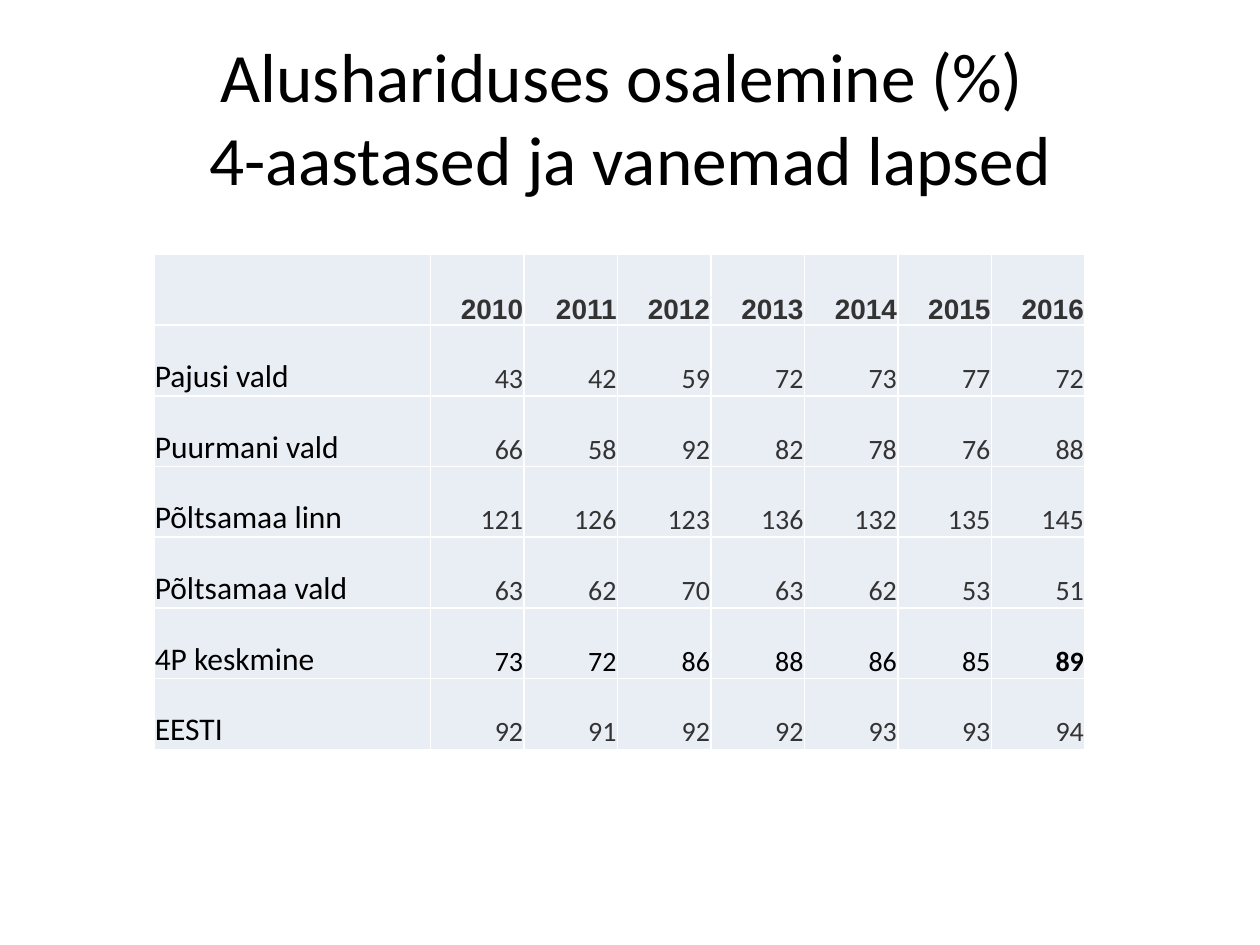
from lxml.etree import SubElement
from pptx import Presentation
from pptx.dml.color import RGBColor
from pptx.enum.text import MSO_ANCHOR, MSO_AUTO_SIZE, PP_ALIGN
from pptx.oxml.ns import qn
from pptx.util import Cm, Pt

COLORS = {"text": "000000", "number": "333333", "cell": "E9EDF4", "border": "FFFFFF"}
TITLE = "Alushariduses osalemine (%) \v4-aastased ja vanemad lapsed"
YEARS = range(2010, 2017)
RATES = {
    "Pajusi vald": [43, 42, 59, 72, 73, 77, 72],
    "Puurmani vald": [66, 58, 92, 82, 78, 76, 88],
    "Põltsamaa linn": [121, 126, 123, 136, 132, 135, 145],
    "Põltsamaa vald": [63, 62, 70, 63, 62, 53, 51],
    "4P keskmine": [73, 72, 86, 88, 86, 85, 89],
    "EESTI": [92, 91, 92, 92, 93, 93, 94],
}
AVERAGE = "4P keskmine"


def color(name):
    return RGBColor.from_string(COLORS[name])


def set_font(p, size, name="text", bold=False, face="Calibri"):
    p.font.name, p.font.size, p.font.bold = face, Pt(size), bold
    p.font.color.rgb = color(name)


def add_borders(cell):
    tcPr = cell._tc.get_or_add_tcPr()
    for side in ("a:lnL", "a:lnR", "a:lnT", "a:lnB"):
        ln = SubElement(tcPr, qn(side), w=str(Pt(1)))
        fill = SubElement(ln, qn("a:solidFill"))
        SubElement(fill, qn("a:srgbClr"), val=COLORS["border"])


def fill_cell(cell, text, align):
    add_borders(cell)
    cell.fill.solid()
    cell.fill.fore_color.rgb = color("cell")
    cell.vertical_anchor = MSO_ANCHOR.BOTTOM
    cell.margin_left = cell.margin_right = cell.margin_top = Cm(0.02)
    cell.margin_bottom = 0
    cell.text = str(text)
    p = cell.text_frame.paragraphs[0]
    p.alignment = align
    return p


def place_title(s, left, top, width, height):
    sp = s.shapes.title
    sp.left, sp.top, sp.width, sp.height = left, top, width, height
    tf = sp.text_frame
    tf.text = TITLE
    tf.auto_size = MSO_AUTO_SIZE.NONE
    tf.vertical_anchor = MSO_ANCHOR.MIDDLE
    p = tf.paragraphs[0]
    p.alignment = PP_ALIGN.CENTER
    set_font(p, 39.6)


def place_table(s, left, top, width, height):
    rows, cols = len(RATES) + 1, len(YEARS) + 1
    table = s.shapes.add_table(rows, cols, left, top, width, height).table
    label_width = Cm(5.58)
    table.columns[0].width = label_width
    for c in range(1, cols):
        table.columns[c].width = (width - label_width) // len(YEARS)

    # Header row of years
    set_font(fill_cell(table.cell(0, 0), "", PP_ALIGN.LEFT), 18)
    for c, year in enumerate(YEARS, 1):
        p = fill_cell(table.cell(0, c), year, PP_ALIGN.RIGHT)
        set_font(p, 16, "number", True, "Arial")

    # One row per municipality; the latest average is bold
    for r, (label, values) in enumerate(RATES.items(), 1):
        set_font(fill_cell(table.cell(r, 0), label, PP_ALIGN.LEFT), 18)
        is_average = label == AVERAGE
        for c, value in enumerate(values, 1):
            p = fill_cell(table.cell(r, c), value, PP_ALIGN.RIGHT)
            set_font(p, 16, "text" if is_average else "number",
                     is_average and c == len(values))


def main():
    prs = Presentation()
    prs.slide_width, prs.slide_height = Cm(25.4), Cm(19.05)
    s = prs.slides.add_slide(prs.slide_layouts[5])
    place_title(s, Cm(1.27), Cm(0.76), Cm(22.86), Cm(3.18))
    place_table(s, Cm(3.1), Cm(5.13), Cm(18.77), Cm(9.98))
    prs.save("out.pptx")


if __name__ == "__main__":
    main()
